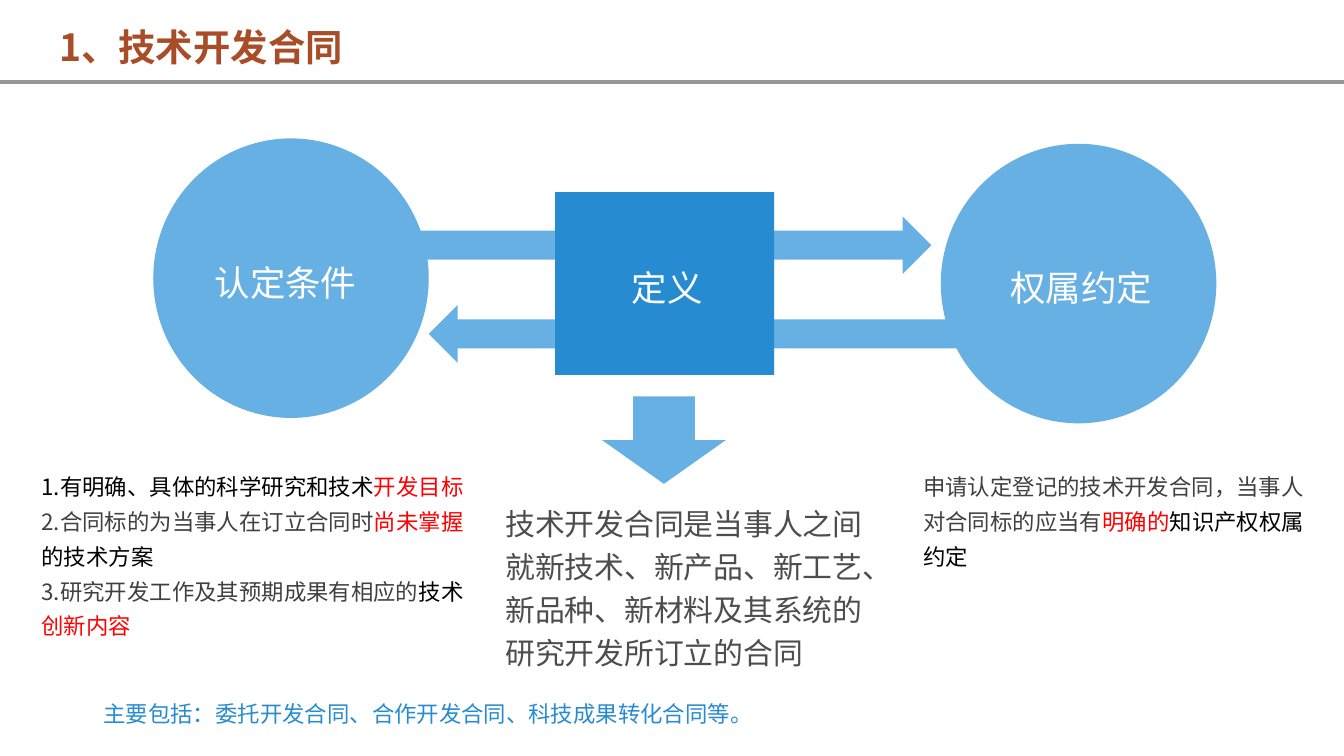
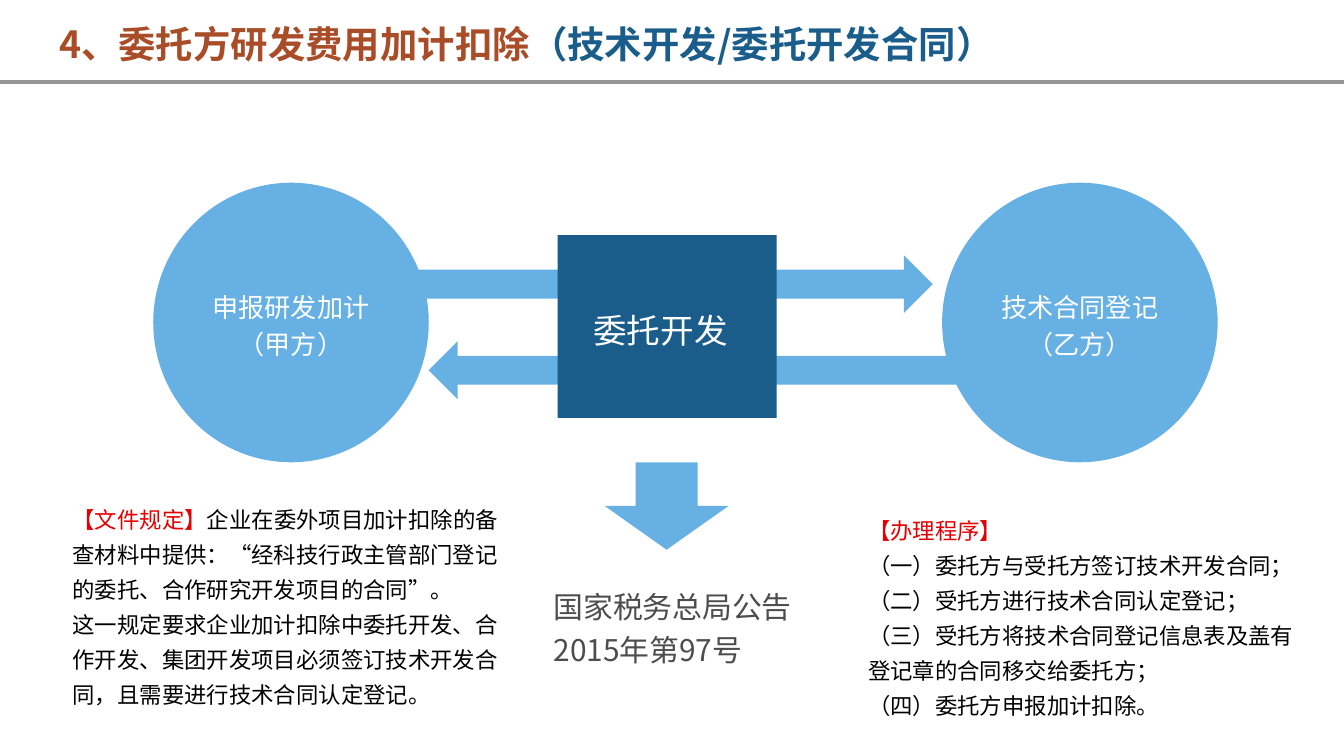
from dataclasses import dataclass

from lxml.etree import SubElement
from pptx import Presentation
from pptx.dml.color import RGBColor
from pptx.enum.shapes import MSO_CONNECTOR as Connector, MSO_SHAPE as Kind
from pptx.enum.text import MSO_ANCHOR as Anchor, MSO_AUTO_SIZE as AutoSize, PP_ALIGN as Align
from pptx.oxml.ns import qn
from pptx.util import Inches, Pt

FONT = "Noto Sans CJK SC"
COLORS = {
    "rule": "969696",
    "light_blue": "67B0E3",
    "blue": "278BD1",
    "dark_blue": "1A5D8B",
    "rust": "A94D28",
    "red": "FF0000",
    "label_red": "E30000",
    "label_dark_red": "760303",
    "black": "000000",
    "dark_gray": "404040",
    "gray": "4D4D4D",
    "white": "FFFFFF",
}
GRADIENTS = {"label": ("label_red", "label_dark_red")}
NODE_SIZES = {
    Kind.OVAL: (2.05, 2.08),
    Kind.RECTANGLE: (1.63, 1.36),
    Kind.RIGHT_ARROW: (3.89, 0.43),
    Kind.LEFT_ARROW: (4.03, 0.43),
    Kind.DOWN_ARROW: (0.92, 0.65),
}
SLIDE_WIDTH = Inches(10)
SLIDE_HEIGHT = SLIDE_WIDTH * 9 // 16
WIDE_INSETS = (0.11, 0.05)
NARROW_INSETS = (0.07, 0.04)
TITLE_INSETS = (0.1, 0.05)


@dataclass(frozen=True)
class Span:
    text: str
    color: str = "black"


Paragraphs = tuple[tuple[Span, ...], ...]


@dataclass(frozen=True)
class Node:
    kind: Kind
    left: float
    top: float
    lines: tuple[str, ...] = ()
    size: float = 19
    color: str = "light_blue"
    shift: float = 0


@dataclass(frozen=True)
class TextBlock:
    left: float
    top: float
    width: float
    height: float
    paragraphs: Paragraphs
    size: float = 12
    spacing: float = 1.3
    insets: tuple[float, float] = WIDE_INSETS


@dataclass(frozen=True)
class DiagramSlide:
    title: TextBlock
    nodes: tuple[Node, ...]
    texts: tuple[TextBlock, ...]


def title_block(top: float, width: float, *spans: Span) -> TextBlock:
    return TextBlock(0.34, top, width, 0.5, (spans,), 20, 1.2, TITLE_INSETS)


SLIDES = (
    DiagramSlide(
        title_block(0.06, 2.92, Span("1、技术开发合同", "rust")),
        (
            Node(Kind.RIGHT_ARROW, 3.04, 1.61),
            Node(Kind.LEFT_ARROW, 3.19, 2.27),
            Node(Kind.OVAL, 1.14, 1.03, ("认定条件",), shift=-0.04),
            Node(Kind.OVAL, 7, 1.07, ("权属约定",), shift=0.02),
            Node(Kind.RECTANGLE, 4.13, 1.43, ("定义",), color="blue", shift=0.02),
            Node(Kind.DOWN_ARROW, 4.48, 2.95),
        ),
        (
            TextBlock(0.2, 3.41, 3.44, 1.42, (
                (Span("1.有明确、具体的科学研究和技术"), Span("开发目标", "red")),
                (
                    Span("2.合同标的为当事人在订立合同时", "dark_gray"),
                    Span("尚未掌握", "red"),
                    Span("的技术方案"),
                ),
                (
                    Span("3.研究开发工作及其预期成果有相应的", "dark_gray"),
                    Span("技术"),
                    Span("创新内容", "red"),
                ),
            )),
            TextBlock(6.76, 3.41, 3.1, 1.15, (
                (
                    Span("申请认定登记的技术开发合同，当事人对合同标的应当有", "dark_gray"),
                    Span("明确的", "red"),
                    Span("知识产权权属约定"),
                ),
            )),
            TextBlock(3.65, 3.66, 3, 1.39, (
                (Span("技术开发合同是当事人之间就新技术、新产品、新工艺、新品种、"
                      "新材料及其系统的研究开发所订立的合同", "gray"),),
            ), 16, 1.2),
            TextBlock(0.7, 5.11, 8.58, 0.34, (
                (Span("主要包括：委托开发合同、合作开发合同、科技成果转化合同等。", "blue"),),
            ), insets=NARROW_INSETS),
        ),
    ),
    DiagramSlide(
        title_block(
            0.04, 8.14,
            Span("4、委托方研发费用加计扣除", "rust"),
            Span("（技术开发/委托开发合同）", "dark_blue"),
        ),
        (
            Node(Kind.RIGHT_ARROW, 3.05, 1.9),
            Node(Kind.LEFT_ARROW, 3.19, 2.54),
            Node(Kind.OVAL, 1.14, 1.36, ("申报研发加计", "（甲方）"), 14),
            Node(Kind.OVAL, 7.01, 1.36, ("技术合同登记", "（乙方）"), 14),
            Node(Kind.RECTANGLE, 4.15, 1.75, ("委托开发",), 18, "dark_blue", -0.05),
            Node(Kind.DOWN_ARROW, 4.5, 3.44),
        ),
        (
            TextBlock(0.43, 3.66, 3.45, 1.68, (
                (
                    Span("【文件规定】", "label"),
                    Span("企业在委外项目加计扣除的备查材料中提供：“经科技行政主管部门"
                         "登记的委托、合作研究开发项目的合同”。"),
                ),
                (Span("这一规定要求企业加计扣除中委托开发、合作开发、集团开发项目"
                      "必须签订技术开发合同，且需要进行技术合同认定登记。"),),
            )),
            TextBlock(6.35, 3.74, 3.4, 1.68, (
                (Span("【办理程序】", "label"),),
                (Span("（一）委托方与受托方签订技术开发合同；"),),
                (Span("（二）受托方进行技术合同认定登记；"),),
                (Span("（三）受托方将技术合同登记信息表及盖有登记章的合同移交给委托方；"),),
                (Span("（四）委托方申报加计扣除。"),),
            )),
            TextBlock(4.01, 4.28, 2.09, 0.75, (
                (Span("国家税务总局公告2015年第97号", "gray"),),
            ), 16, 1.2),
        ),
    ),
)


def rgb(color: str) -> RGBColor:
    return RGBColor.from_string(COLORS[color])


def color_font(font, color: str) -> None:
    if color not in GRADIENTS:
        font.color.rgb = rgb(color)
        return
    font.fill.gradient()
    font.fill.gradient_angle = 0
    for stop, stop_color in zip(font.fill.gradient_stops, GRADIENTS[color]):
        stop.color.rgb = rgb(stop_color)


def write_text(frame, paragraphs: Paragraphs, size: float, spacing: float,
               insets: tuple[float, float], align: Align = Align.LEFT,
               bold: bool = False, shift: float = 0) -> None:
    frame.word_wrap = True
    frame.margin_left = Inches(insets[0] + shift)
    frame.margin_right = Inches(insets[0] - shift)
    frame.margin_top = frame.margin_bottom = Inches(insets[1])
    for index, spans in enumerate(paragraphs):
        paragraph = frame.add_paragraph() if index else frame.paragraphs[0]
        paragraph.alignment = align
        paragraph.line_spacing = spacing
        for span in spans:
            run = paragraph.add_run()
            run.text = span.text
            run.font.size = Pt(size)
            run.font.bold = bold
            color_font(run.font, span.color)
            run.font.name = FONT
            SubElement(run.font._element, qn("a:ea")).set("typeface", FONT)


def draw_title(slide, block: TextBlock) -> None:
    title = slide.shapes.title
    title.left, title.top = Inches(block.left), Inches(block.top)
    title.width, title.height = Inches(block.width), Inches(block.height)
    title.text_frame.vertical_anchor = Anchor.TOP
    title.text_frame.auto_size = AutoSize.NONE
    write_text(title.text_frame, block.paragraphs, block.size, block.spacing,
               block.insets, bold=True)


def draw_rule(slide) -> None:
    rule = slide.shapes.add_connector(
        Connector.STRAIGHT, Inches(0), Inches(0.61), SLIDE_WIDTH, Inches(0.61))
    rule.line.color.rgb = rgb("rule")
    rule.line.width = Pt(1.75)
    SubElement(rule.element.spPr, qn("a:effectLst"))


def draw_node(slide, node: Node) -> None:
    width, height = NODE_SIZES[node.kind]
    shape = slide.shapes.add_shape(
        node.kind, Inches(node.left), Inches(node.top), Inches(width), Inches(height))
    shape.shadow.inherit = False
    shape.fill.solid()
    shape.fill.fore_color.rgb = rgb(node.color)
    shape.line.fill.background()
    if node.lines:
        shape.text_frame.vertical_anchor = Anchor.MIDDLE
        paragraphs = tuple((Span(line, "white"),) for line in node.lines)
        write_text(shape.text_frame, paragraphs, node.size, 1.2, WIDE_INSETS,
                   Align.CENTER, shift=node.shift)


def draw_text(slide, block: TextBlock) -> None:
    box = slide.shapes.add_textbox(
        Inches(block.left), Inches(block.top), Inches(block.width), Inches(block.height))
    box.text_frame.auto_size = AutoSize.SHAPE_TO_FIT_TEXT
    write_text(box.text_frame, block.paragraphs, block.size, block.spacing, block.insets)


def main() -> None:
    presentation = Presentation()
    presentation.slide_width = SLIDE_WIDTH
    presentation.slide_height = SLIDE_HEIGHT
    title_only = presentation.slide_layouts[5]
    for content in SLIDES:
        slide = presentation.slides.add_slide(title_only)
        draw_title(slide, content.title)
        draw_rule(slide)
        for node in content.nodes:
            draw_node(slide, node)
        for block in content.texts:
            draw_text(slide, block)
    presentation.save("out.pptx")


if __name__ == "__main__":
    main()
